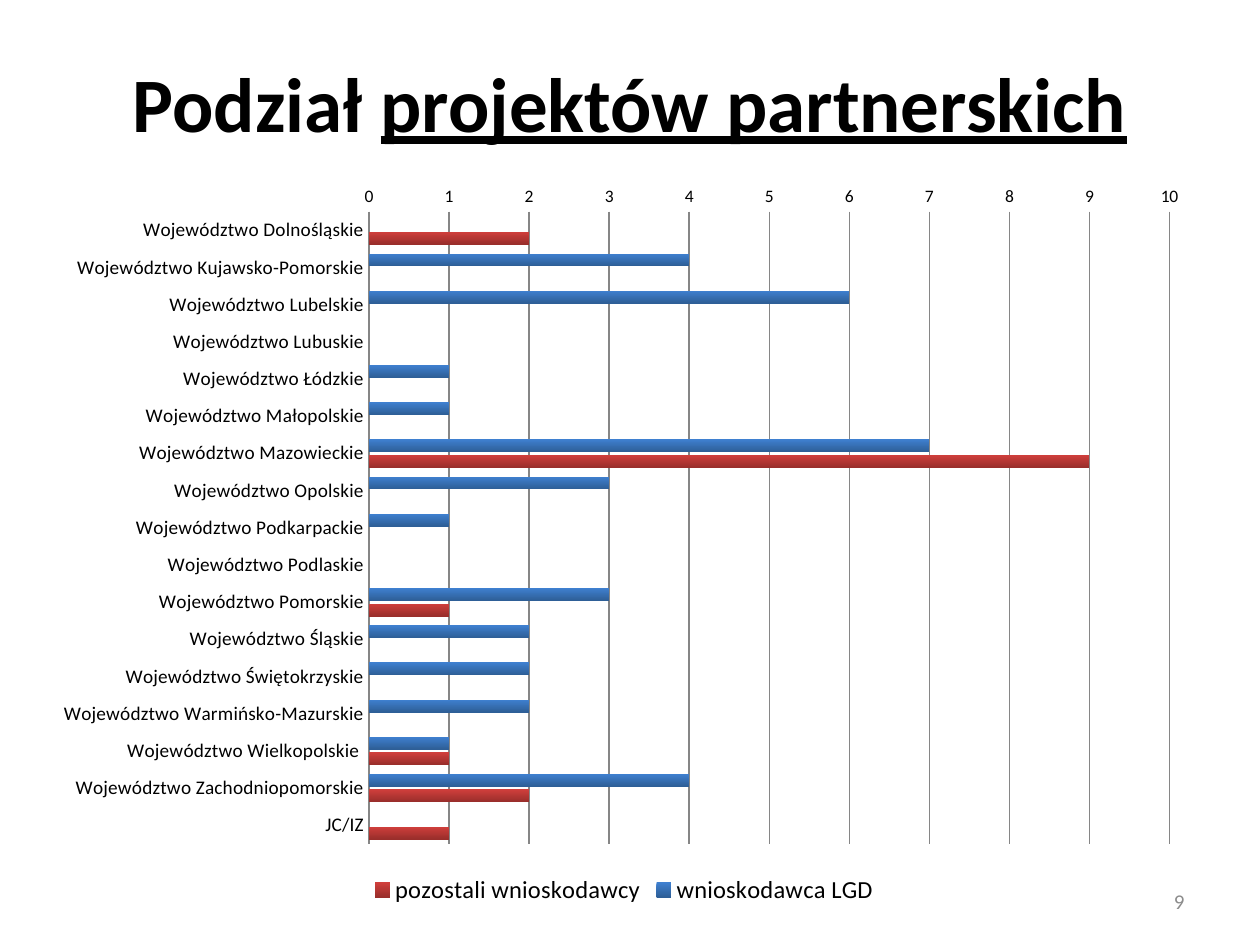
"""Build a slide with a bar chart of partnership projects by voivodeship."""
from lxml import etree
from pptx import Presentation
from pptx.chart.data import CategoryChartData
from pptx.dml.color import RGBColor
from pptx.enum.chart import XL_CHART_TYPE as CHART, XL_LEGEND_POSITION as LEGEND
from pptx.enum.chart import XL_TICK_MARK as TICK
from pptx.enum.text import MSO_ANCHOR as ANCHOR, PP_ALIGN as ALIGN
from pptx.oxml.ns import qn
from pptx.util import Pt

FONT = "Calibri"
BLACK = RGBColor(0x00, 0x00, 0x00)
GRAY = RGBColor(0x8C, 0x8C, 0x8C)
GRID = RGBColor(0x86, 0x86, 0x86)
BLUE_TOP = RGBColor(0x3F, 0x80, 0xD0)
BLUE_BOTTOM = RGBColor(0x2E, 0x5F, 0x97)
RED_TOP = RGBColor(0xD0, 0x3F, 0x3C)
RED_BOTTOM = RGBColor(0x9A, 0x2E, 0x2B)

REGIONS = [
    "Dolnośląskie", "Kujawsko-Pomorskie", "Lubelskie", "Lubuskie", "Łódzkie",
    "Małopolskie", "Mazowieckie", "Opolskie", "Podkarpackie", "Podlaskie",
    "Pomorskie", "Śląskie", "Świętokrzyskie", "Warmińsko-Mazurskie",
    "Wielkopolskie ", "Zachodniopomorskie",
]
SERIES = [
    ("wnioskodawca LGD", [0, 4, 6, 0, 1, 1, 7, 3, 1, 0, 3, 2, 2, 2, 1, 4, 0],
     BLUE_TOP, BLUE_BOTTOM),
    ("pozostali wnioskodawcy", [2, 0, 0, 0, 0, 0, 9, 0, 0, 0, 1, 0, 0, 0, 1, 2, 1],
     RED_TOP, RED_BOTTOM),
]
PLOT_LAYOUT = [
    ("layoutTarget", "inner"), ("xMode", "edge"), ("yMode", "edge"),
    ("x", 0.28), ("y", 0.05), ("w", 0.69), ("h", 0.86),
]


def add_run(p, text, size=44, color=BLACK, bold=False, underline=False):
    r = p.add_run()
    r.text = text
    r.font.name, r.font.size = FONT, Pt(size)
    r.font.bold, r.font.underline = bold, underline
    r.font.color.rgb = color


prs = Presentation()
prs.slide_width, prs.slide_height = Pt(720), Pt(540)
s = prs.slides.add_slide(prs.slide_layouts[5])

title = s.shapes.title
title.left, title.top, title.width, title.height = Pt(36), Pt(21.6), Pt(648), Pt(72.7)
title.text_frame.vertical_anchor = ANCHOR.MIDDLE
p = title.text_frame.paragraphs[0]
p.alignment = ALIGN.CENTER
add_run(p, "Podział ", bold=True)
add_run(p, "projektów partnerskich", bold=True, underline=True)

number = s.shapes.add_textbox(Pt(516), Pt(500.5), Pt(168), Pt(28.75))
tf = number.text_frame
tf.word_wrap = True
tf.vertical_anchor = ANCHOR.MIDDLE
tf.paragraphs[0].alignment = ALIGN.RIGHT
add_run(tf.paragraphs[0], "9", size=12, color=GRAY)

data = CategoryChartData()
data.categories = [f"Województwo {region}" for region in REGIONS] + ["JC/IZ"]
for name, values, top, bottom in SERIES:
    data.add_series(name, values)
chart = s.shapes.add_chart(
    CHART.BAR_CLUSTERED, Pt(25.2), Pt(100), Pt(663), Pt(420), data).chart
chart.has_title = False
chart.font.name, chart.font.size = FONT, Pt(10)
chart.font.color.rgb = BLACK

plot = chart.plots[0]
plot.gap_width, plot.overlap = 75, -25
plot.vary_by_categories = False
for series, (name, values, top, bottom) in zip(plot.series, SERIES):
    series.invert_if_negative = False
    fill = series.format.fill
    fill.gradient()
    fill.gradient_angle = 270
    for stop, color in zip(fill.gradient_stops, (top, bottom)):
        stop.color.rgb = color

cat = chart.category_axis
cat.reverse_order = True
cat.tick_labels.font.size = Pt(11)
cat.format.line.color.rgb = GRID
val = chart.value_axis
val.minimum_scale, val.maximum_scale, val.major_unit = 0, 10, 1
val.has_major_gridlines = True
val.major_gridlines.format.line.color.rgb = GRID
val.format.line.fill.background()
for axis in (cat, val):
    axis.major_tick_mark = axis.minor_tick_mark = TICK.NONE

chart.has_legend = True
chart.legend.position = LEGEND.BOTTOM
chart.legend.include_in_layout = False
chart.legend.font.size = Pt(14)

area = chart.element.find(".//" + qn("c:plotArea"))
for old in area.findall(qn("c:layout")):
    area.remove(old)
layout = etree.Element(qn("c:layout"))
area.insert(0, layout)
manual = etree.SubElement(layout, qn("c:manualLayout"))
for tag, value in PLOT_LAYOUT:
    etree.SubElement(manual, qn(f"c:{tag}")).set("val", str(value))

prs.save("out.pptx")
